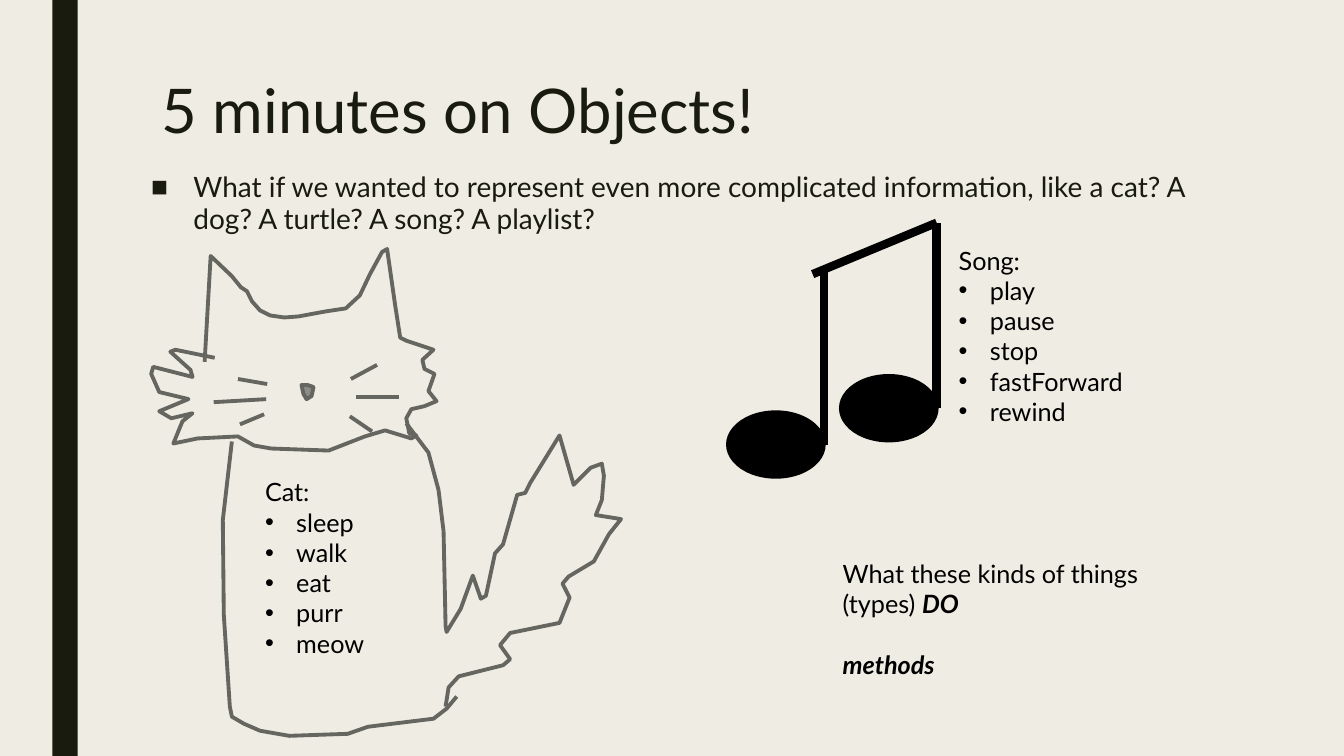
from lxml.etree import SubElement
from pptx import Presentation
from pptx.dml.color import RGBColor
from pptx.enum.shapes import MSO_CONNECTOR, MSO_SHAPE
from pptx.oxml.ns import qn
from pptx.util import Emu, Pt

PX = 9144
WIDTH, HEIGHT = 1333, 750
SKETCH_WIDTH, STEM_WIDTH = 2.75, 6
COLORS = {name: RGBColor.from_string(value) for name, value in {
    "paper": "EFEDE3", "ink": "191B0E", "sketch": "666661", "nose": "8C8D86", "black": "000000"}.items()}


def add_text(box, paragraphs, size, color, bullet="", indent=0, first_bullet=0):
    frame = slide.shapes.add_textbox(*[Emu(v * PX) for v in box]).text_frame
    frame.word_wrap = True
    frame.text = "\n".join(paragraphs)
    for index, paragraph in enumerate(frame.paragraphs):
        for run in paragraph.runs:
            run.font.size = Pt(size)
            run.font.name = "Lato"
            run.font.color.rgb = COLORS[color]
        if bullet and index >= first_bullet:
            properties = paragraph._p.get_or_add_pPr()
            properties.set("marL", str(indent * PX))
            properties.set("indent", str(-indent * PX))
            SubElement(properties, qn("a:buFont")).set("typeface", "Arial")
            SubElement(properties, qn("a:buChar")).set("char", bullet)
    return frame.paragraphs


def paint(shape, fill, line):
    shape.shadow.inherit = False
    if fill:
        shape.fill.solid()
        shape.fill.fore_color.rgb = COLORS[fill]
    else:
        shape.fill.background()
    if line:
        shape.line.color.rgb = COLORS[line]
        shape.line.width = Pt(SKETCH_WIDTH)
    else:
        shape.line.fill.background()


prs = Presentation()
prs.slide_width = Emu(WIDTH * PX)
prs.slide_height = Emu(HEIGHT * PX)
slide = prs.slides.add_slide(prs.slide_layouts[6])
slide.background.fill.solid()
slide.background.fill.fore_color.rgb = COLORS["paper"]

side_bar = slide.shapes.add_shape(
    MSO_SHAPE.RECTANGLE, Emu(52 * PX), 0, Emu(25 * PX), Emu(HEIGHT * PX))
paint(side_bar, "ink", None)

title, = add_text((150, 75, 1050, 162), ["5 minutes on Objects!"], 44, "ink")
title.line_spacing = 0.89
question, = add_text(
    (140, 166, 1050, 392),
    ["What if we wanted to represent even more complicated information, "
     "like a cat? A dog? A turtle? A song? A playlist?"],
    20, "ink", "■", 42)
question.line_spacing = 0.94

left_ear = [(203, 359), (209, 254), (230, 274), (239, 285), (245, 289)]
forehead = [(250, 299), (258, 308), (268, 313), (282, 315), (296, 314), (323, 309), (343, 306)]
right_ear = [(357, 293), (367, 272), (379, 250), (384, 247), (392, 303), (397, 335)]
right_fur = [(403, 338), (430, 347), (419, 357), (421, 366), (431, 371), (425, 388),
             (433, 398), (421, 403), (408, 406), (403, 415), (406, 430), (413, 432)]
chin = [(408, 435), (382, 427), (362, 433), (326, 447), (269, 445), (252, 442), (236, 433)]
left_fur = [(196, 435), (172, 440), (181, 418), (191, 410), (170, 415), (158, 408), (187, 396),
            (158, 389), (150, 371), (152, 364), (191, 374), (189, 367), (169, 349), (174, 347), (213, 355)]

back = [(403, 420), (425, 449), (435, 486), (440, 527), (442, 621)]
tail_upper_fur = [(443, 627), (457, 604), (469, 571), (477, 594), (482, 591), (491, 549), (499, 540),
                  (513, 491), (521, 489), (526, 479), (555, 432), (569, 481), (586, 464), (597, 460)]
tail_lower_fur = [(599, 472), (597, 496), (591, 511), (616, 515), (604, 530), (589, 557), (564, 572),
                  (558, 579), (565, 593), (555, 618), (506, 628), (496, 640), (506, 654), (499, 660)]
tail_base = [(455, 671), (445, 682), (442, 701)]

left_side = [(230, 438), (221, 516), (222, 610), (228, 701), (230, 711)]
belly = [(242, 718), (258, 725), (287, 730), (345, 728), (365, 721), (430, 713), (443, 703), (453, 691)]
nose = [(299, 382), (301, 391), (304, 396), (309, 393), (311, 384), (305, 382)]

cat = slide.shapes.add_group_shape()
head = left_ear + forehead + right_ear + right_fur + chin + left_fur
back_and_tail = back + tail_upper_fur + tail_lower_fur + tail_base
for outline, fill in [(head, None), (back_and_tail, None), (left_side + belly, None), (nose, "nose")]:
    builder = cat.shapes.build_freeform(*outline[0], scale=PX)
    builder.add_line_segments(outline[1:], close=outline is nose)
    paint(builder.convert_to_shape(), fill, "sketch")

whiskers = [
    ((348, 376), (374, 362)), ((353, 394), (396, 394)), ((347, 413), (369, 428)),
    ((265, 381), (236, 376)), ((264, 396), (212, 399)), ((262, 411), (238, 421))]

music = slide.shapes.add_group_shape()
NOTE_WIDTH, NOTE_HEIGHT = 95, 64
stems = []
for left, top, stem_top in [(722, 409, 270), (834, 373, 221)]:
    note = music.shapes.add_shape(
        MSO_SHAPE.OVAL, *[Emu(v * PX) for v in (left, top, NOTE_WIDTH, NOTE_HEIGHT)])
    paint(note, "black", "black")
    stem_x = left + NOTE_WIDTH
    stems.append(((stem_x, top + NOTE_HEIGHT // 2), (stem_x, stem_top)))
beam = (stems[1][1], (806, 272))

for drawing, strokes, color, width in [
    (cat, whiskers, "sketch", SKETCH_WIDTH),
    (music, stems + [beam], "black", STEM_WIDTH),
]:
    for start, end in strokes:
        stroke = drawing.shapes.add_connector(
            MSO_CONNECTOR.STRAIGHT, *[Emu(v * PX) for v in start + end])
        stroke.line.color.rgb = COLORS[color]
        stroke.line.width = Pt(width)
        SubElement(stroke._element.spPr, qn("a:effectLst"))

for box, kind_and_methods in [
    ((253, 468, 162, 192), ["Cat:", "sleep", "walk", "eat", "purr", "meow"]),
    ((941, 238, 229, 192), ["Song:", "play", "pause", "stop", "fastForward", "rewind"]),
]:
    add_text(box, kind_and_methods, 18, "black", bullet="•", indent=31, first_bullet=1)

things, methods = add_text(
    (826, 549, 331, 131), ["What these kinds of things (types) ", "methods"], 18, "black")
methods.space_before = Pt(21.6)
do = things.add_run()
do.text = "DO"
for emphasis in (do, methods.runs[0]):
    emphasis.font.size = Pt(18)
    emphasis.font.name = "Lato"
    emphasis.font.color.rgb = COLORS["black"]
    emphasis.font.bold = True
    emphasis.font.italic = True

prs.save("out.pptx")
